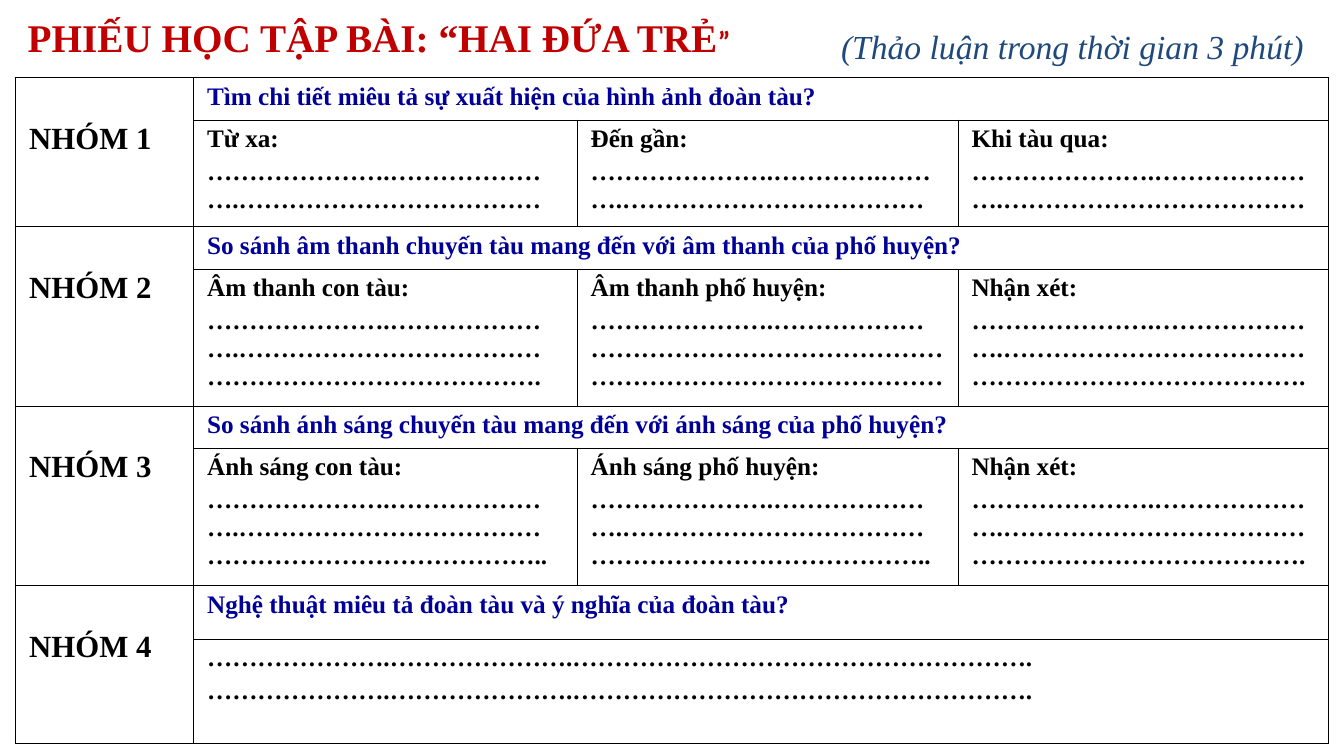
from pptx import Presentation
from pptx.dml.color import RGBColor
from pptx.enum.text import MSO_ANCHOR, MSO_AUTO_SIZE, PP_ALIGN
from pptx.oxml import parse_xml
from pptx.oxml.ns import nsdecls
from pptx.util import Inches, Pt

# Content
TITLE = ("PHIẾU HỌC TẬP BÀI: “HAI ĐỨA TRẺ", "”")
TIME_NOTE = "(Thảo luận trong thời gian 3 phút)"

DOTS_SHORT = "………………….………………….………………………………"
DOTS_LONG = "………………….………………….…………………………………………………………………."
DOTS_LINE = "………………….………………….………………………………………………."

# Group, question, answer cells (each a list of paragraphs)
GROUPS = [
    ("NHÓM 1", "Tìm chi tiết miêu tả sự xuất hiện của hình ảnh đoàn tàu?", [
        ["Từ xa:", DOTS_SHORT],
        ["Đến gần:", "………………….………….……….………………………………"],
        ["Khi tàu qua:", DOTS_SHORT],
    ]),
    ("NHÓM 2", "So sánh âm thanh chuyến tàu mang đến với âm thanh của phố huyện?", [
        ["Âm thanh con tàu:", DOTS_LONG],
        ["Âm thanh phố huyện:",
         "………………….…………………………………………………………………………………………"],
        ["Nhận xét:", DOTS_LONG],
    ]),
    ("NHÓM 3", "So sánh ánh sáng chuyến tàu mang đến với ánh sáng của phố huyện?", [
        ["Ánh sáng con tàu:", DOTS_LONG + "."],
        ["Ánh sáng phố huyện:", DOTS_LONG + "."],
        ["Nhận xét:", DOTS_LONG],
    ]),
    ("NHÓM 4", "Nghệ thuật miêu tả đoàn tàu và ý nghĩa của đoàn tàu?", [
        [DOTS_LINE, DOTS_LINE],
    ]),
]

# Layout, in inches
COLUMN_WIDTHS = [3.53, 7.61, 7.56, 7.35]
ROW_HEIGHTS = [0.84, 2.12, 0.84, 2.72, 0.84, 2.72, 1.06, 2.08]
LEFT, TABLE_TOP = 0.31, 1.54
CELL_SIDE, CELL_TOP, GROUP_TOP = 0.27, 0.1, 0.88

THEME = {
    "font": "Times New Roman", "quote_font": "Calibri",
    "title": "C00000", "note": "1F497D", "question": "000099", "ink": "000000",
    "title_size": 56, "quote_size": 42, "note_size": 48,
    "group_size": 44, "body_size": 36,
    "outer_line": 2.25, "inner_line": 1,
}


def style(run, size, color, font=THEME["font"], bold=True, italic=False):
    run.font.name = font
    run.font.size = Pt(size)
    run.font.color.rgb = RGBColor.from_string(color)
    run.font.bold = bold
    run.font.italic = italic


def set_heading_frame(shape, left, top, width, height):
    shape.left, shape.top = Inches(left), Inches(top)
    shape.width, shape.height = Inches(width), Inches(height)
    frame = shape.text_frame
    frame.word_wrap = True
    frame.auto_size = MSO_AUTO_SIZE.NONE
    frame.vertical_anchor = MSO_ANCHOR.TOP
    frame.margin_left = frame.margin_right = Inches(0.24)
    frame.margin_top, frame.margin_bottom = Inches(0.19), Inches(0.12)
    frame.paragraphs[0].alignment = PP_ALIGN.LEFT
    return frame.paragraphs[0]


def fill_cell(cell, paragraphs, size, color, top=CELL_TOP):
    cell.margin_left = cell.margin_right = Inches(CELL_SIDE)
    cell.margin_top, cell.margin_bottom = Inches(top), Inches(CELL_TOP)
    cell.text_frame.text = "\n".join(paragraphs)
    for index, paragraph in enumerate(cell.text_frame.paragraphs):
        paragraph.space_before = Pt(0.2 * size if index else 0)
        for run in paragraph.runs:
            style(run, size, color)


def add_borders(cell, row, column):
    last_row = row + cell.span_height == len(ROW_HEIGHTS)
    last_column = column + cell.span_width == len(COLUMN_WIDTHS)
    outer = {"L": column == 0, "R": last_column, "T": row == 0, "B": last_row}
    for side, is_outer in outer.items():
        width = Pt(THEME["outer_line" if is_outer else "inner_line"])
        cell._tc.get_or_add_tcPr().append(parse_xml(
            f'<a:ln{side} {nsdecls("a")} w="{width}"><a:solidFill>'
            f'<a:srgbClr val="{THEME["ink"]}"/></a:solidFill></a:ln{side}>'))


def main():
    presentation = Presentation()
    presentation.slide_width, presentation.slide_height = Inches(26.67), Inches(15)
    slide = presentation.slides.add_slide(presentation.slide_layouts[5])

    # Title
    title = set_heading_frame(slide.shapes.title, LEFT, 0.08, 16.35, 1.2)
    for text in TITLE:
        title.add_run().text = text
    style(title.runs[0], THEME["title_size"], THEME["title"])
    style(title.runs[1], THEME["quote_size"], THEME["title"], THEME["quote_font"])

    # Time note
    note_box = slide.shapes.add_textbox(0, 0, 0, 0)
    note = set_heading_frame(note_box, 16.45, 0.33, 9.91, 1.05)
    note.text = TIME_NOTE
    style(note.runs[0], THEME["note_size"], THEME["note"], bold=False, italic=True)

    # Worksheet table
    worksheet = slide.shapes.add_table(
        len(ROW_HEIGHTS), len(COLUMN_WIDTHS), Inches(LEFT), Inches(TABLE_TOP),
        Inches(sum(COLUMN_WIDTHS)), Inches(sum(ROW_HEIGHTS))).table
    worksheet.first_row = worksheet.horz_banding = False
    for column, width in zip(worksheet.columns, COLUMN_WIDTHS):
        column.width = Inches(width)
    for row, height in zip(worksheet.rows, ROW_HEIGHTS):
        row.height = Inches(height)

    # Two rows per group: question above, answers below
    last = len(COLUMN_WIDTHS) - 1
    for index, (group, question, answers) in enumerate(GROUPS):
        top = 2 * index
        group_cell, question_cell = worksheet.cell(top, 0), worksheet.cell(top, 1)
        group_cell.merge(worksheet.cell(top + 1, 0))
        question_cell.merge(worksheet.cell(top, last))
        if len(answers) == 1:
            worksheet.cell(top + 1, 1).merge(worksheet.cell(top + 1, last))
        fill_cell(group_cell, [group], THEME["group_size"], THEME["ink"], GROUP_TOP)
        fill_cell(question_cell, [question], THEME["body_size"], THEME["question"])
        for column, answer in enumerate(answers, start=1):
            fill_cell(worksheet.cell(top + 1, column), answer,
                      THEME["body_size"], THEME["ink"])

    # Grid lines
    for row in range(len(ROW_HEIGHTS)):
        for column in range(len(COLUMN_WIDTHS)):
            cell = worksheet.cell(row, column)
            add_borders(cell, row, column)
            cell.fill.background()

    presentation.save("out.pptx")


if __name__ == "__main__":
    main()
